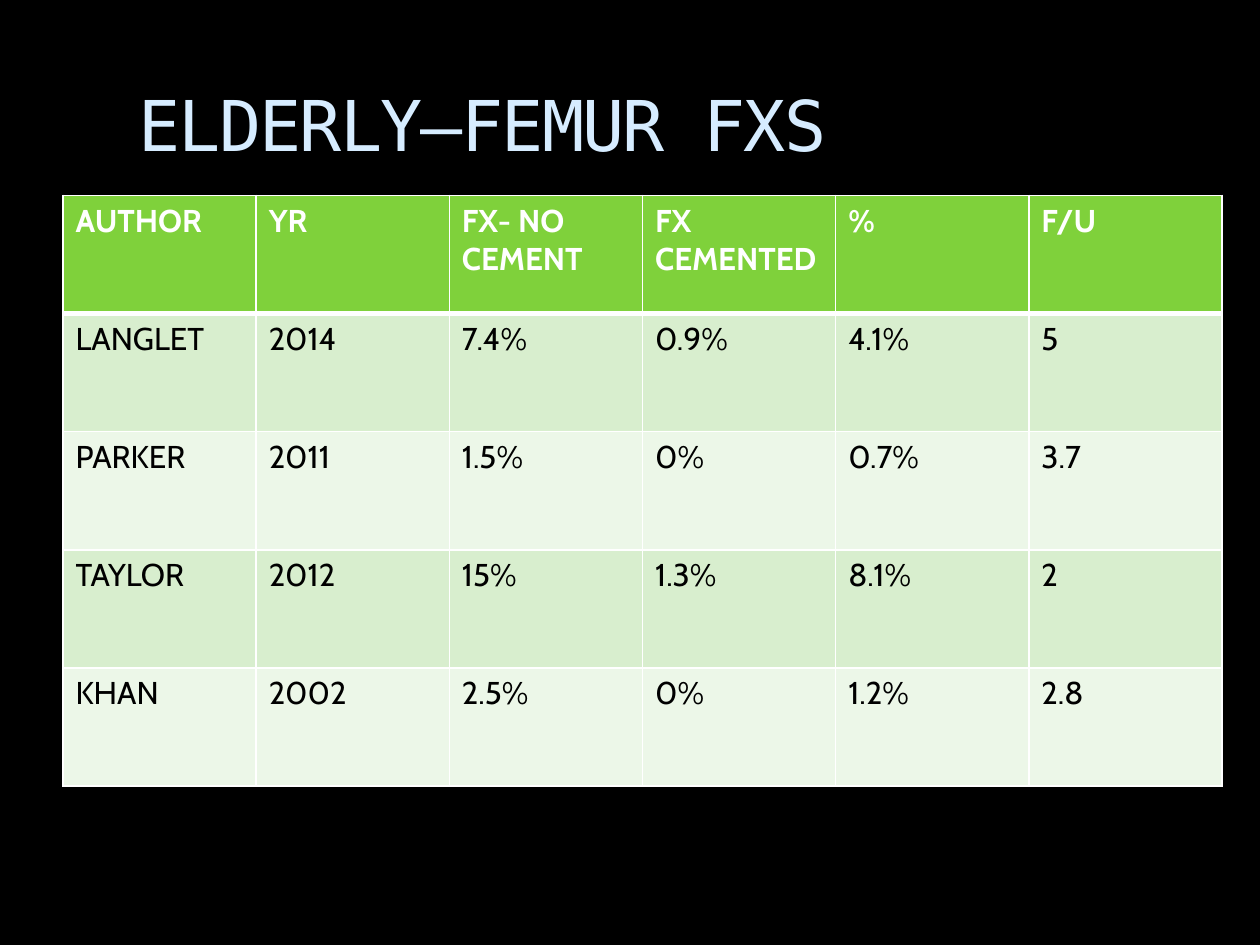
"""Build a slide with a table of femur fracture rates in the elderly."""
import pptx
import pptx.util
import pptx.dml.color
import pptx.enum.text
import pptx.oxml
import pptx.oxml.ns

ROWS = [
    ["AUTHOR", "YR", "FX- NO CEMENT", "FX CEMENTED", "%", "F/U"],
    ["LANGLET", "2014", "7.4%", "0.9%", "4.1%", "5"],
    ["PARKER", "2011", "1.5%", "0%", "0.7%", "3.7"],
    ["TAYLOR", "2012", "15%", "1.3%", "8.1%", "2"],
    ["KHAN", "2002", "2.5%", "0%", "1.2%", "2.8"],
]
HEADER, BANDS = "7FD13B", ["ECF7E8", "D8EECE"]
Inches, Pt = pptx.util.Inches, pptx.util.Pt


def rgb(color):
    return pptx.dml.color.RGBColor.from_string(color)


def border(cell, side, points, color="FFFFFF"):
    ns = pptx.oxml.ns.nsdecls("a")
    ln = pptx.oxml.parse_xml(
        f'<a:{side} {ns} w="{Pt(points)}"><a:solidFill>'
        f'<a:srgbClr val="{color}"/></a:solidFill></a:{side}>')
    cell._tc.get_or_add_tcPr().append(ln)


prs = pptx.Presentation()
prs.slide_width, prs.slide_height = Inches(10), Inches(7.5)
s = prs.slides.add_slide(prs.slide_layouts[6])
s.background.fill.solid()
s.background.fill.fore_color.rgb = rgb("000000")

sp = s.shapes.add_textbox(Inches(1), Inches(0.56), Inches(8.5), Inches(1))
tf = sp.text_frame
tf.word_wrap = True
tf.vertical_anchor = pptx.enum.text.MSO_ANCHOR.TOP
tf.margin_top = Inches(0.09)
p = tf.paragraphs[0]
r = p.add_run()
r.text = "ELDERLY—FEMUR FXS"
r.font.size = Pt(40)
r.font.name = "DejaVu Sans Mono"
r.font.color.rgb = rgb("D6ECFF")
r.font._element.set("spc", "-100")

table = s.shapes.add_table(len(ROWS), len(ROWS[0]), Inches(0.5), Inches(1.55),
                           Inches(9.2), Inches(4.69)).table
for i, row in enumerate(ROWS):
    for j, text in enumerate(row):
        cell = table.cell(i, j)
        cell.text = text
        p = cell.text_frame.paragraphs[0]
        p.font.size = Pt(18)
        p.font.name = "Cabin"
        p.font.bold = i == 0
        p.font.color.rgb = rgb("FFFFFF" if i == 0 else "000000")
        border(cell, "lnL", 1)
        border(cell, "lnR", 1)
        border(cell, "lnT", 3 if i == 1 else 1)
        border(cell, "lnB", 3 if i == 0 else 1)
        cell.fill.solid()
        cell.fill.fore_color.rgb = rgb(HEADER if i == 0 else BANDS[i % 2])

prs.save("out.pptx")
